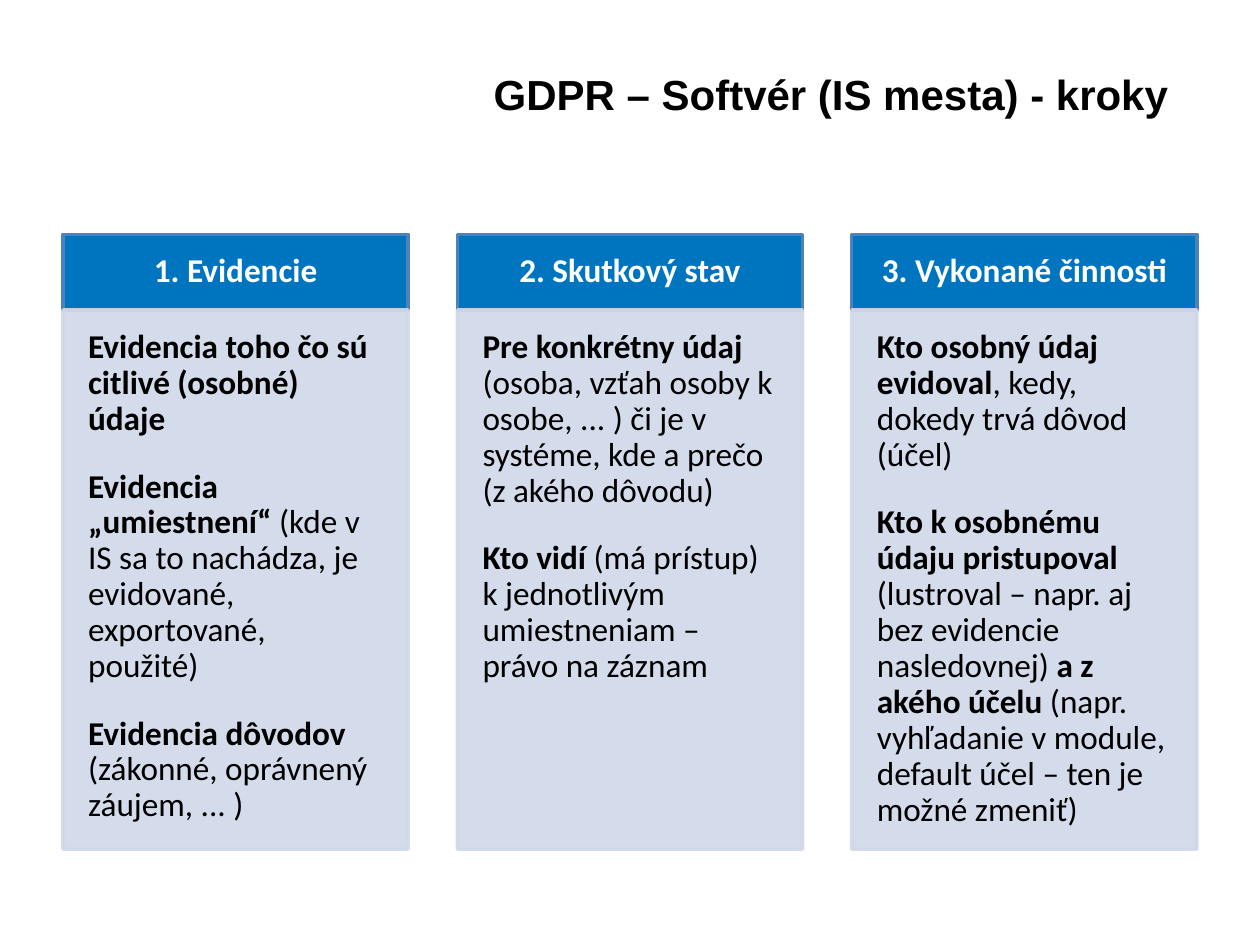
"""Build the slide of three GDPR steps for the town information system."""

from dataclasses import dataclass
from typing import Any

from pptx import Presentation
from pptx.dml.color import RGBColor
from pptx.enum.shapes import MSO_SHAPE
from pptx.enum.text import MSO_ANCHOR, PP_ALIGN
from pptx.oxml.ns import qn
from pptx.util import Inches, Pt
from lxml.etree import SubElement


@dataclass(frozen=True)
class Theme:
    title_font: str = "Arial"
    body_font: str = "Calibri"
    title_size: int = 24
    body_size: int = 19
    text: str = "000000"
    header_text: str = "FFFFFF"
    header_fill: str = "0075BF"
    header_line: str = "4F81BD"
    panel: str = "D0D8E8"
    panel_opacity: int = 90
    line_width: int = 2


@dataclass(frozen=True)
class Run:
    text: str
    bold: bool = False


@dataclass(frozen=True)
class Step:
    heading: str
    paragraphs: list[list[Run]]


@dataclass(frozen=True)
class Box:
    left: float
    top: float
    width: float
    height: float

    def lengths(self) -> list[Inches]:
        return [Inches(value) for value in (self.left, self.top, self.width, self.height)]


THEME = Theme()
FIRST_LEFT, COLUMN_PITCH, COLUMN_WIDTH = 0.5, 3.13, 2.74
HEADER_TOP, HEADER_HEIGHT, PANEL_HEIGHT = 1.86, 0.6, 4.28

STEPS = [
    Step("1. Evidencie", [
        [Run("Evidencia toho čo sú citlivé (osobné) údaje", True)],
        [Run("Evidencia „umiestnení“ ", True),
         Run("(kde v IS sa to nachádza, je evidované, exportované, použité)")],
        [Run("Evidencia dôvodov ", True), Run("(zákonné, oprávnený záujem, ... )")],
    ]),
    Step("2. Skutkový stav", [
        [Run("Pre konkrétny údaj ", True),
         Run("(osoba, vzťah osoby k osobe, ... ) či je v systéme, kde a prečo (z akého dôvodu)")],
        [Run("Kto vidí ", True),
         Run("(má prístup) k jednotlivým umiestneniam – právo na záznam")],
    ]),
    Step("3. Vykonané činnosti", [
        [Run("Kto osobný údaj evidoval", True), Run(", kedy, dokedy trvá dôvod (účel)")],
        [Run("Kto k osobnému údaju pristupoval ", True),
         Run("(lustroval – napr. aj bez evidencie nasledovnej) "),
         Run("a z akého účelu", True),
         Run(" (napr. vyhľadanie v module, default účel – ten je možné zmeniť)")],
    ]),
]


def apply_format(target: Any, values: dict[str, Any]) -> None:
    for name, value in values.items():
        setattr(target, name, value)


def set_frame(frame: Any, anchor: Any, side: float, vertical: float) -> None:
    apply_format(frame, {
        "word_wrap": True, "vertical_anchor": anchor,
        "margin_left": Inches(side), "margin_right": Inches(side),
        "margin_top": Inches(vertical), "margin_bottom": Inches(vertical),
    })


def write_paragraphs(frame: Any, paragraphs: list[list[Run]], font: dict[str, Any],
                     color: str, layout: dict[str, Any]) -> None:
    for index, runs in enumerate(paragraphs):
        paragraph = frame.add_paragraph() if index else frame.paragraphs[0]
        apply_format(paragraph, layout)
        if index == 0:
            paragraph.space_before = Pt(0)
        for item in runs:
            run = paragraph.add_run()
            run.text = item.text
            apply_format(run.font, {**font, "bold": item.bold})
            run.font.color.rgb = RGBColor.from_string(color)


def add_rectangle(slide: Any, box: Box, fill: str, line: str, opacity: int = 100) -> Any:
    shape = slide.shapes.add_shape(MSO_SHAPE.RECTANGLE, *box.lengths())
    shape.shadow.inherit = False
    shape.fill.solid()
    shape.fill.fore_color.rgb = RGBColor.from_string(fill)
    shape.line.color.rgb = RGBColor.from_string(line)
    shape.line.width = Pt(THEME.line_width)
    if opacity < 100:
        for color in shape._element.spPr.iter(qn("a:srgbClr")):
            SubElement(color, qn("a:alpha")).set("val", str(opacity * 1000))
    return shape


def add_title(slide: Any, text: str) -> None:
    frame = slide.shapes.add_textbox(*Box(3.82, 0.23, 5.75, 1.03).lengths()).text_frame
    set_frame(frame, MSO_ANCHOR.MIDDLE, 0.1, 0.05)
    font = {"name": THEME.title_font, "size": Pt(THEME.title_size)}
    write_paragraphs(frame, [[Run(text, True)]], font, THEME.text,
                     {"alignment": PP_ALIGN.LEFT})


def add_step(slide: Any, step: Step, left: float) -> None:
    font = {"name": THEME.body_font, "size": Pt(THEME.body_size)}
    header = add_rectangle(slide, Box(left, HEADER_TOP, COLUMN_WIDTH, HEADER_HEIGHT),
                           THEME.header_fill, THEME.header_line)
    set_frame(header.text_frame, MSO_ANCHOR.MIDDLE, 0.15, 0.08)
    write_paragraphs(header.text_frame, [[Run(step.heading, True)]], font,
                     THEME.header_text,
                     {"alignment": PP_ALIGN.CENTER, "line_spacing": 0.9})

    panel_top = HEADER_TOP + HEADER_HEIGHT
    panel = add_rectangle(slide, Box(left, panel_top, COLUMN_WIDTH, PANEL_HEIGHT),
                          THEME.panel, THEME.panel, THEME.panel_opacity)
    set_frame(panel.text_frame, MSO_ANCHOR.TOP, 0.2, 0.16)
    write_paragraphs(panel.text_frame, step.paragraphs, font, THEME.text, {
        "alignment": PP_ALIGN.LEFT, "line_spacing": 0.9,
        "space_before": Pt(6), "space_after": Pt(12),
    })


def main() -> None:
    presentation = Presentation()
    presentation.slide_width = Inches(10)
    presentation.slide_height = Inches(7.5)
    slide = presentation.slides.add_slide(presentation.slide_layouts[6])
    add_title(slide, "GDPR – Softvér (IS mesta) - kroky")
    for index, step in enumerate(STEPS):
        add_step(slide, step, FIRST_LEFT + index * COLUMN_PITCH)
    presentation.save("out.pptx")


if __name__ == "__main__":
    main()
